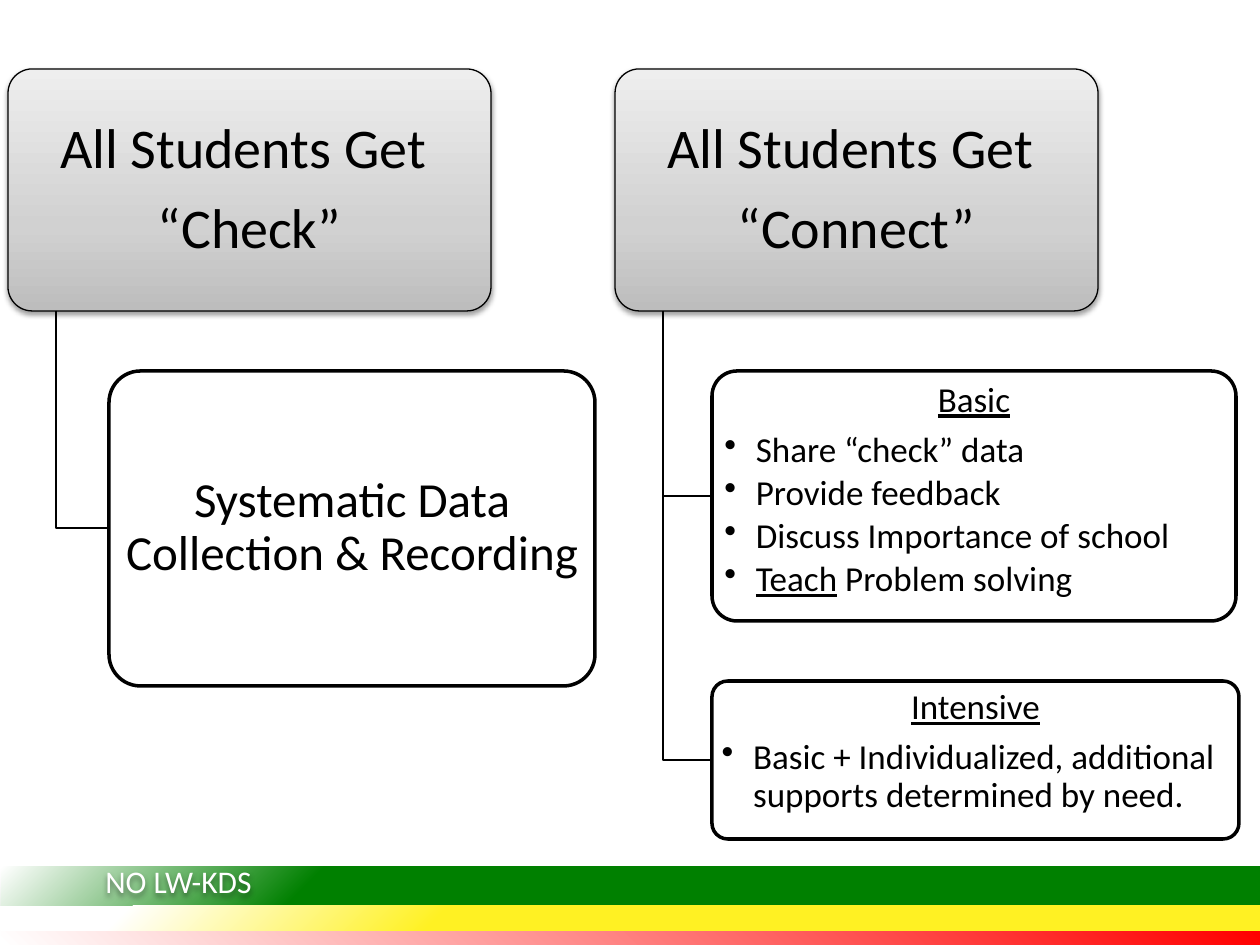
from lxml import etree
from pptx import Presentation
from pptx.dml.color import RGBColor
from pptx.enum.shapes import MSO_SHAPE
from pptx.enum.text import MSO_ANCHOR, PP_ALIGN
from pptx.oxml.ns import qn
from pptx.util import Pt

EMU_PER_PX = 914400 / 126
ROUNDED, RECTANGLE = MSO_SHAPE.ROUNDED_RECTANGLE, MSO_SHAPE.RECTANGLE
TOP, MIDDLE = MSO_ANCHOR.TOP, MSO_ANCHOR.MIDDLE
CENTER, LEFT = PP_ALIGN.CENTER, PP_ALIGN.LEFT

FONT = "Calibri"
BLACK, WHITE = "000000", "FFFFFF"
HEAD_STOPS = [(0, "BDBDBD"), (35, "D1D1D1"), (100, "EEEEEE")]
HEAD_TOP, HEAD_WIDTH, HEAD_HEIGHT = 69, 483, 242
STEM_OFFSET = 48

# A paragraph is (is bullet, [(text, is underlined), ...]).
COLUMNS = [
    {
        "left": 8,
        "head": "“Check”",
        "children": [
            {"box": (109, 371, 486, 315), "size": 28, "anchor": MIDDLE, "insets": (7, 5),
             "paragraphs": [(False, [("Systematic Data Collection & Recording", False)])]},
        ],
    },
    {
        "left": 615,
        "head": "“Connect”",
        "children": [
            {"box": (712, 371, 524, 250), "size": 20, "anchor": TOP, "insets": (5, 4),
             "paragraphs": [
                 (False, [("Basic", True)]),
                 (True, [("Share “check” data", False)]),
                 (True, [("Provide feedback", False)]),
                 (True, [("Discuss Importance of school", False)]),
                 (True, [("Teach", True), (" Problem solving", False)])]},
            {"box": (712, 681, 527, 158), "size": 20, "anchor": TOP, "insets": (5, 4),
             "paragraphs": [
                 (False, [("Intensive", True)]),
                 (True, [("Basic + Individualized, additional supports determined by need.",
                          False)])]},
        ],
    },
]

# Top, height, gradient stops, and the corner (l, t, r, b) where the colour starts.
BANDS = [
    (931, 15, [(0, "FF0000"), (100, WHITE)], (100, 0, 0, 100)),
    (867, 39, [(75, "008000"), (100, WHITE)], (100, 100, 0, 0)),
    (906, 25, [(65, "FFF123"), (90, WHITE)], (100, 100, 0, 0)),
]


def px(value):
    return round(value * EMU_PER_PX)


def color(value):
    return RGBColor.from_string(value)


def add_xml(parent, tag, **attributes):
    return etree.SubElement(parent, qn(tag), {key: str(value) for key, value in attributes.items()})


def set_fill(shape, value):
    shape.fill.solid()
    shape.fill.fore_color.rgb = color(value)


def set_gradient(shape, stops, corner=None):
    """Fill upwards, or outwards from a corner when one is given."""
    shape.fill.gradient()
    gradient = shape.element.spPr.find(qn("a:gradFill"))
    for child in list(gradient):
        gradient.remove(child)
    stop_list = add_xml(gradient, "a:gsLst")
    for position, value in stops:
        stop = add_xml(stop_list, "a:gs", pos=position * 1000)
        add_xml(stop, "a:srgbClr", val=value)
    if corner is None:
        add_xml(gradient, "a:lin", ang=270 * 60000, scaled=1)
    else:
        path = add_xml(gradient, "a:path", path="circle")
        sides = {side: share * 1000 for side, share in zip("ltrb", corner)}
        add_xml(path, "a:fillToRect", **sides)


def add_shadow(shape):
    shape.shadow.inherit = False
    effects = shape.element.spPr.find(qn("a:effectLst"))
    shadow = add_xml(effects, "a:outerShdw", blurRad=40000, dist=20000,
                     dir=90 * 60000, rotWithShape=0)
    add_xml(add_xml(shadow, "a:srgbClr", val=BLACK), "a:alpha", val=38000)


def set_line(shape, width):
    shape.line.color.rgb = color(BLACK)
    shape.line.width = Pt(width)


def add_run(paragraph, text, size, value=BLACK, underline=False):
    run = paragraph.add_run()
    run.text = text
    formats = {"name": FONT, "size": Pt(size), "underline": underline}
    for name, setting in formats.items():
        setattr(run.font, name, setting)
    run.font.color.rgb = color(value)


def format_paragraph(paragraph, bullet):
    formats = {"alignment": LEFT if bullet else CENTER, "line_spacing": 0.9,
               "level": 1 if bullet else 0}
    for name, setting in formats.items():
        setattr(paragraph, name, setting)
    properties = paragraph._p.get_or_add_pPr()
    space_after = add_xml(properties, "a:spcAft")
    add_xml(space_after, "a:spcPct", val=15000 if bullet else 35000)
    if bullet:
        properties.set("marL", "228600")
        properties.set("indent", "-228600")
        add_xml(properties, "a:buChar", char="•")


def add_shape(slide, kind, box):
    shape = slide.shapes.add_shape(kind, *map(px, box))
    shape.shadow.inherit = False
    return shape


def add_text_box(slide, box, paragraphs, size, anchor, insets, line_width):
    shape = add_shape(slide, ROUNDED, box)
    shape.adjustments[0] = 0.1
    set_line(shape, line_width)
    frame = shape.text_frame
    side, end = map(px, insets)
    formats = {"word_wrap": True, "vertical_anchor": anchor, "margin_left": side,
               "margin_right": side, "margin_top": end, "margin_bottom": end}
    for name, setting in formats.items():
        setattr(frame, name, setting)
    for index, (bullet, runs) in enumerate(paragraphs):
        paragraph = frame.add_paragraph() if index else frame.paragraphs[0]
        format_paragraph(paragraph, bullet)
        for text, underline in runs:
            add_run(paragraph, text, size, underline=underline)
    return shape


def add_elbow(slide, start, end):
    """Draw a line down from start, then across to end."""
    builder = slide.shapes.build_freeform(*start, scale=EMU_PER_PX)
    builder.add_line_segments([(start[0], end[1]), end], close=False)
    elbow = builder.convert_to_shape()
    elbow.shadow.inherit = False
    elbow.fill.background()
    set_line(elbow, 0.75)


def add_column(slide, left, head, children):
    paragraphs = [(False, [(text, False)]) for text in ("All Students Get ", head)]
    box = (left, HEAD_TOP, HEAD_WIDTH, HEAD_HEIGHT)
    header = add_text_box(slide, box, paragraphs, 32, MIDDLE, (8, 5), 0.75)
    set_gradient(header, HEAD_STOPS)
    add_shadow(header)
    for child in children:
        child_left, top, _, height = child["box"]
        add_elbow(slide, (left + STEM_OFFSET, HEAD_TOP + HEAD_HEIGHT),
                  (child_left, top + height / 2))
        set_fill(add_text_box(slide, **child, line_width=2), WHITE)


def add_footer(slide):
    for top, height, stops, corner in BANDS:
        band = add_shape(slide, RECTANGLE, (1, top, 1260, height))
        set_gradient(band, stops, corner)
        band.line.fill.background()
    label = slide.shapes.add_textbox(*map(px, (93, 856, 242, 50)))
    label.text_frame.word_wrap = True
    add_run(label.text_frame.paragraphs[0], "NO LW-KDS", 18, WHITE)
    add_shadow(label)


def main():
    presentation = Presentation()
    presentation.slide_width, presentation.slide_height = px(1260), px(945)
    slide = presentation.slides.add_slide(presentation.slide_layouts[6])
    for column in COLUMNS:
        add_column(slide, **column)
    add_footer(slide)
    presentation.save("out.pptx")


if __name__ == "__main__":
    main()
